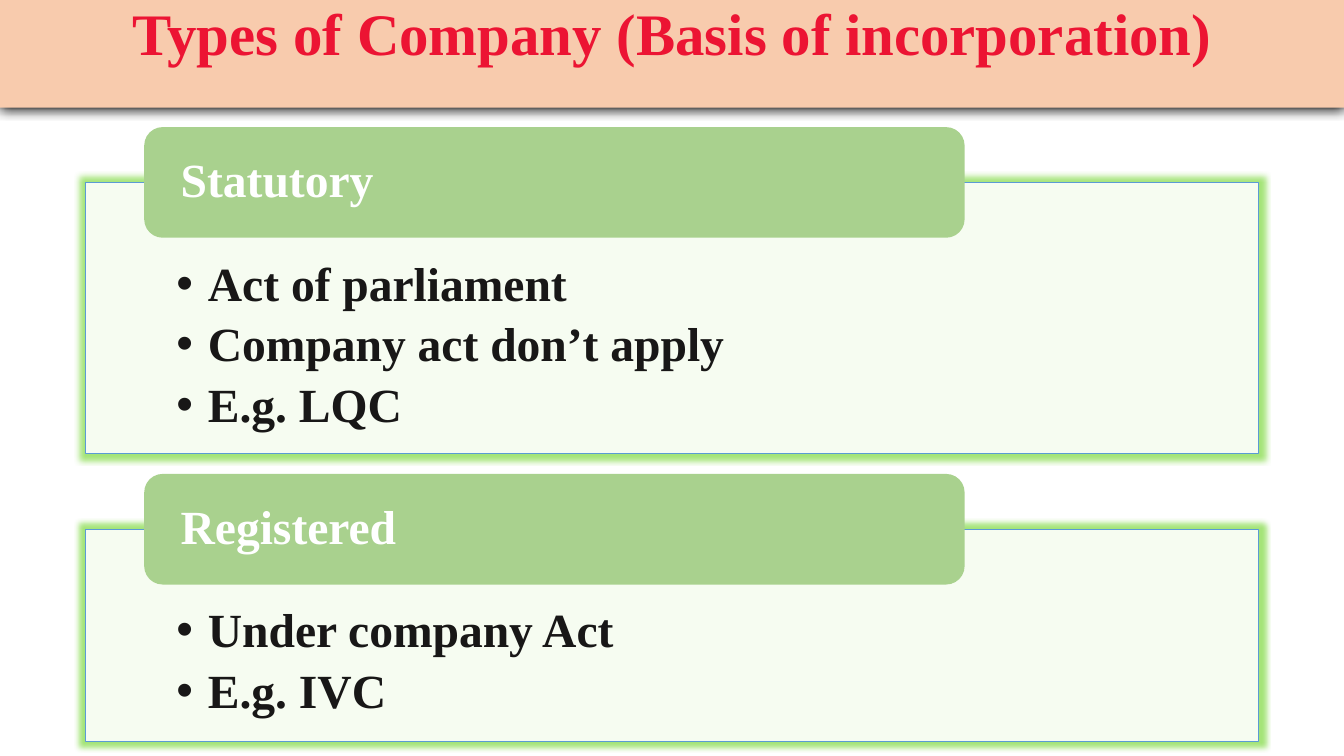
"""Build a slide on statutory and registered companies."""
from dataclasses import dataclass

from lxml import etree
from pptx import Presentation
from pptx import util as u
from pptx.dml import color
from pptx.enum import shapes, text
from pptx.oxml import ns


@dataclass(frozen=True)
class Theme:
    font: str = "Times New Roman"
    banner: str = "F8CBAD"
    heading: str = "EC1433"
    panel: str = "FFFFFF"
    border: str = "5B9BD5"
    tab: str = "A9D18E"
    tab_text: str = "FFFFFF"
    body_text: str = "181717"
    glow: str = "69D320"
    shadow: str = "000000"
    heading_size: int = 42
    body_size: int = 34


theme = Theme()


def write(shape, content, *, size, ink, align=text.PP_ALIGN.LEFT,
          anchor=text.MSO_ANCHOR.TOP, insets=(7.2, 3.6, 7.2, 3.6),
          after=0, bullet=None, hang=22.5):
    frame = shape.text_frame
    frame.text = content
    frame.word_wrap = True
    frame.auto_size = text.MSO_AUTO_SIZE.NONE
    frame.vertical_anchor = anchor
    (frame.margin_left, frame.margin_top,
     frame.margin_right, frame.margin_bottom) = map(u.Pt, insets)
    for line in frame.paragraphs:
        line.alignment = align
        line.line_spacing = 0.9
        line.space_before = u.Pt(0)
        line.space_after = u.Pt(after)
        font = line.runs[0].font
        font.name, font.size, font.bold = theme.font, u.Pt(size), True
        font.color.rgb = color.RGBColor.from_string(ink)
        if bullet:
            line.level = 1
            layout = line._p.get_or_add_pPr()
            layout.set("marL", str(u.Pt(hang)))
            layout.set("indent", str(-u.Pt(hang)))
            etree.SubElement(layout, ns.qn("a:buChar"), char=bullet)


def paint(shape, fill, *, border=None, opacity=100, effect=None, ink=None,
          strength=100, **settings):
    shape.fill.solid()
    shape.fill.fore_color.rgb = color.RGBColor.from_string(fill)
    if opacity < 100:
        tint = shape._element.spPr.find(ns.qn("a:solidFill"))[0]
        etree.SubElement(tint, ns.qn("a:alpha"), val=str(opacity * 1000))
    if border:
        shape.line.color.rgb = color.RGBColor.from_string(border)
        shape.line.width = u.Pt(0.5)
    else:
        shape.line.fill.background()
    shape.shadow.inherit = False
    if effect:
        effects = shape._element.spPr.find(ns.qn("a:effectLst"))
        node = etree.SubElement(effects, ns.qn(effect),
                                {key: str(value) for key, value in settings.items()})
        tint = etree.SubElement(node, ns.qn("a:srgbClr"), val=ink)
        etree.SubElement(tint, ns.qn("a:alpha"), val=str(strength * 1000))


company_types = [
    ("Statutory", ["Act of parliament", "Company act don’t apply", "E.g. LQC"]),
    ("Registered", ["Under company Act", "E.g. IVC"]),
]
panel_left, panel_width, panel_gap = 61, 838, 54
tab_left, tab_width, tab_height, tab_rise = 103, 586, 79, 39.5
panel_padding, line_pitch = 68.3, 41.8

deck = Presentation()
deck.slide_width, deck.slide_height = u.Pt(960), u.Pt(540)
slide = deck.slides.add_slide(deck.slide_layouts[3])
heading, *panels = slide.placeholders

heading.left, heading.top = u.Pt(0), u.Pt(0)
heading.width, heading.height = u.Pt(960), u.Pt(77)
paint(heading, theme.banner, effect="a:outerShdw", ink=theme.shadow,
      blurRad=u.Pt(8.5), dist=u.Pt(1), dir=5400000, algn="t", rotWithShape=0)
write(heading, "Types of Company (Basis of incorporation)",
      size=theme.heading_size, ink=theme.heading, align=text.PP_ALIGN.CENTER)

panel_top = 130.3
for panel, (company_type, features) in zip(panels, company_types):
    panel_height = panel_padding + line_pitch * len(features)
    panel.left, panel.top = u.Pt(panel_left), u.Pt(panel_top)
    panel.width, panel.height = u.Pt(panel_width), u.Pt(panel_height)
    paint(panel, theme.panel, border=theme.border, opacity=90,
          effect="a:glow", ink=theme.glow, strength=60, rad=u.Pt(8))
    write(panel, "\n".join(features), size=theme.body_size, ink=theme.body_text,
          insets=(65, 55.4, 65, 18.7), after=6.5, bullet="•")

    tab = slide.shapes.add_shape(
        shapes.MSO_SHAPE.ROUNDED_RECTANGLE, u.Pt(tab_left),
        u.Pt(panel_top - tab_rise), u.Pt(tab_width), u.Pt(tab_height))
    paint(tab, theme.tab)
    write(tab, company_type, size=theme.body_size, ink=theme.tab_text,
          anchor=text.MSO_ANCHOR.MIDDLE, insets=(22.2, 0, 22.2, 0))
    panel_top += panel_height + panel_gap

deck.save("out.pptx")
